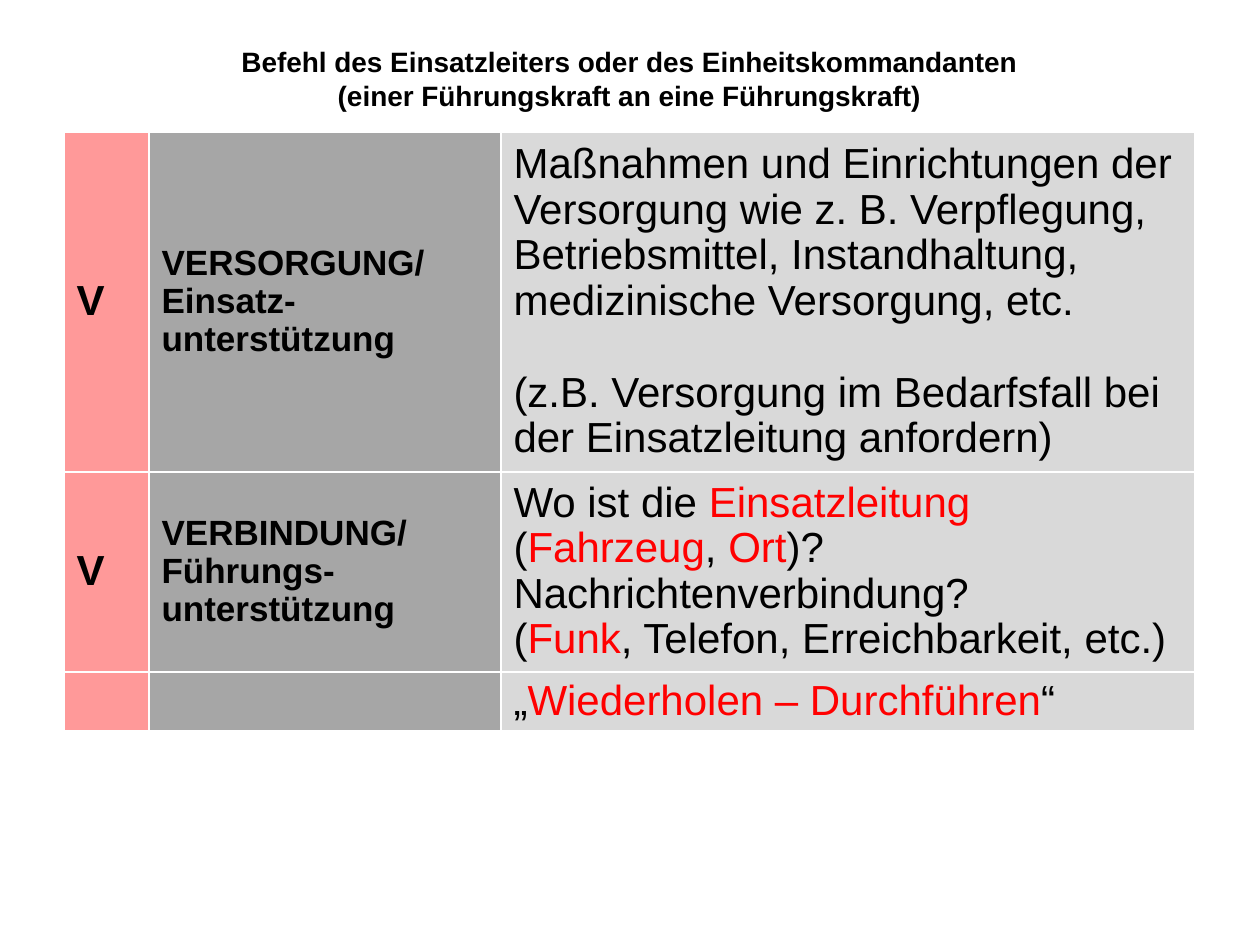
from pptx import Presentation
from pptx.dml.color import RGBColor
from pptx.enum.text import MSO_ANCHOR, PP_ALIGN
from pptx.oxml import parse_xml
from pptx.oxml.ns import nsdecls
from pptx.util import Pt

TOP, MIDDLE = MSO_ANCHOR.TOP, MSO_ANCHOR.MIDDLE
LEFT, CENTER = PP_ALIGN.LEFT, PP_ALIGN.CENTER
PX = 914400 // 126
BLACK, RED, WHITE = "000000", "FF0000", "FFFFFF"

# A paragraph is a string or a list of pieces; a (text,) tuple is a highlighted piece.
TITLE = ["Befehl des Einsatzleiters oder des Einheitskommandanten",
         "(einer Führungskraft an eine Führungskraft)"]
ROWS = [
    (["V"],
     ["VERSORGUNG/", "Einsatz-unterstützung"],
     ["Maßnahmen und Einrichtungen der Versorgung wie z. B. Verpflegung, "
      "Betriebsmittel, Instandhaltung, medizinische Versorgung, etc.",
      "(z.B. Versorgung im Bedarfsfall bei der Einsatzleitung anfordern)"]),
    (["V"],
     ["VERBINDUNG/", "Führungs-unterstützung"],
     [["Wo ist die ", ("Einsatzleitung",), " (", ("Fahrzeug",), ", ", ("Ort",), ")?"],
      "Nachrichtenverbindung?",
      ["(", ("Funk",), ", Telefon, Erreichbarkeit, etc.)"]]),
    ([], [], [["„", ("Wiederholen – Durchführen",), "“"]]),
]
COLUMNS = [  # width px, fill, text size, bold
    (85, "FF9999", 24, True),
    (352, "A6A6A6", 20, True),
    (694, "D9D9D9", 24, False),
]
ROW_HEIGHTS = [340, 200, 59]
TABLE_LEFT, TABLE_TOP = 64, 132
GAP_BEFORE = {(0, 2, 1): 26.7}  # row, column, paragraph: points


def px(n):
    return n * PX


def rgb(value):
    return RGBColor.from_string(value)


def fill(target, color):
    target.fill.solid()
    target.fill.fore_color.rgb = rgb(color)


def write(tf, paragraphs, size, bold=False, align=LEFT, spacing=1.0, gaps=None):
    for i, pieces in enumerate(paragraphs):
        p = tf.paragraphs[0] if i == 0 else tf.add_paragraph()
        p.alignment = align
        p.line_spacing = spacing
        p.space_before = Pt((gaps or {}).get(i, 0))
        for piece in [pieces] if isinstance(pieces, str) else pieces:
            marked = isinstance(piece, tuple)
            r = p.add_run()
            r.text = piece[0] if marked else piece
            r.font.name = "Arial"
            r.font.size = Pt(size)
            r.font.bold = bold
            r.font.color.rgb = rgb(RED if marked else BLACK)


def add_borders(cell):
    """Draw a 1 pt white line on every side; the lines precede the fill."""
    props = cell._tc.get_or_add_tcPr()
    for i, side in enumerate(("lnL", "lnR", "lnT", "lnB")):
        props.insert(i, parse_xml(
            f'<a:{side} {nsdecls("a")} w="12700"><a:solidFill>'
            f'<a:srgbClr val="{WHITE}"/></a:solidFill></a:{side}>'))


def add_title(s):
    title = s.shapes.title
    title.left, title.top, title.width, title.height = map(px, (64, 37, 1131, 89))
    fill(title, WHITE)
    tf = title.text_frame
    tf.word_wrap = True
    tf.vertical_anchor = TOP
    tf.margin_top = px(8)
    write(tf, TITLE, 16, bold=True, align=CENTER)


def add_order_table(s):
    width = sum(column[0] for column in COLUMNS)
    table = s.shapes.add_table(
        len(ROWS), len(COLUMNS), px(TABLE_LEFT), px(TABLE_TOP),
        px(width), px(sum(ROW_HEIGHTS))).table
    for c, column in enumerate(COLUMNS):
        table.columns[c].width = px(column[0])
    for r, (row, height) in enumerate(zip(ROWS, ROW_HEIGHTS)):
        table.rows[r].height = px(height)
        for c, (paragraphs, column) in enumerate(zip(row, COLUMNS)):
            _, color, size, bold = column
            cell = table.cell(r, c)
            cell.vertical_anchor = MIDDLE
            fill(cell, color)
            add_borders(cell)
            gaps = {i: GAP_BEFORE.get((r, c, i), 0) for i in range(len(paragraphs))}
            write(cell.text_frame, paragraphs, size, bold=bold, spacing=0.97, gaps=gaps)


def main():
    prs = Presentation()
    prs.slide_width, prs.slide_height = px(1260), px(945)
    s = prs.slides.add_slide(prs.slide_layouts[5])
    add_title(s)
    add_order_table(s)
    prs.save("out.pptx")


if __name__ == "__main__":
    main()
